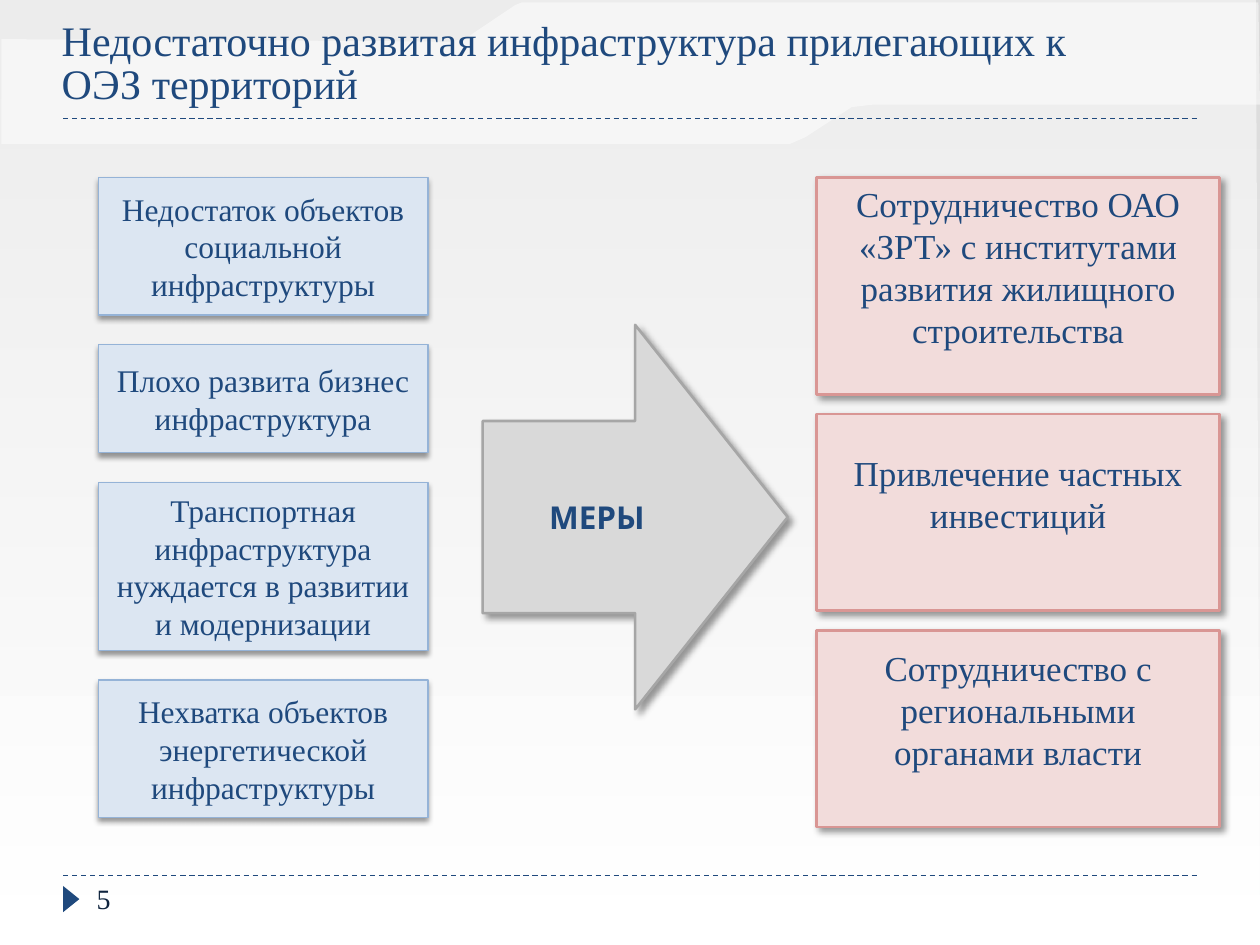
from dataclasses import dataclass

from lxml import etree
from pptx import Presentation
from pptx.dml.color import RGBColor
from pptx.enum.dml import MSO_LINE
from pptx.enum.shapes import MSO_CONNECTOR, MSO_SHAPE
from pptx.enum.text import MSO_ANCHOR, MSO_AUTO_SIZE, PP_ALIGN
from pptx.oxml.ns import qn
from pptx.util import Cm, Pt

RECT, ARROW, TRIANGLE = MSO_SHAPE.RECTANGLE, MSO_SHAPE.RIGHT_ARROW, MSO_SHAPE.ISOSCELES_TRIANGLE
STRAIGHT, DASH = MSO_CONNECTOR.STRAIGHT, MSO_LINE.DASH
MIDDLE, BOTTOM = MSO_ANCHOR.MIDDLE, MSO_ANCHOR.BOTTOM
LEFT, CENTER = PP_ALIGN.LEFT, PP_ALIGN.CENTER
NO_FIT = MSO_AUTO_SIZE.NONE


@dataclass(frozen=True)
class Theme:
    font: str = "Times New Roman"
    arrow_font: str = "Cabin"
    navy: str = "1F497D"
    number: str = "0F243E"
    white: str = "FFFFFF"
    gray: str = "D9D9D9"
    gray_line: str = "A6A6A6"
    blue: str = "DCE6F2"
    blue_line: str = "95B3D7"
    pink: str = "F2DCDB"
    pink_line: str = "D99694"
    title_size: int = 24
    measure_size: int = 20
    problem_size: int = 18
    number_size: int = 16


T = Theme()

PROBLEMS = [
    ("Недостаток объектов социальной инфраструктуры", 2.77),
    ("Плохо развита бизнес инфраструктура", 2.18),
    ("Транспортная инфраструктура нуждается в развитии и модернизации", 3.38),
    ("Нехватка объектов энергетической инфраструктуры", 2.77),
]
MEASURES = [
    ("Сотрудничество ОАО «ЗРТ» с институтами развития жилищного строительства", 4.37),
    ("Привлечение частных инвестиций", 3.96),
    ("Сотрудничество с региональными органами власти", 3.96),
]
VEIL = [(-0.05, 19.02), (25.4, 19.05), (25.32, 0), (-0.08, 0)]
RIBBON = [
    (25.37, 0.05), (10.85, 0.05), (10.52, 0.05), (10.39, 0.1), (9.63, 0.61),
    (9.4, 0.77), (9.07, 0.84), (4.5, 0.81), (0.03, 0.79), (0.03, 2.9),
    (15.93, 2.9), (16.23, 2.77), (17.17, 2.16), (17.6, 2.11), (25.4, 2.11),
]


def rgb(color):
    return RGBColor.from_string(color)


def paint(sp, color):
    sp.fill.solid()
    sp.fill.fore_color.rgb = rgb(color)


def write(tf, text, size, color=T.navy, font=T.font, bold=False, align=CENTER):
    tf.word_wrap = True
    p = tf.paragraphs[0]
    p.text = text
    p.alignment = align
    p.font.size, p.font.name, p.font.bold = Pt(size), font, bold
    p.font.color.rgb = rgb(color)
    return p


def add_background(s):
    fill = s.background.fill
    fill.gradient()
    fill.gradient_angle = 270
    for stop, color in zip(fill.gradient_stops, (T.gray, T.white)):
        stop.color.rgb = rgb(color)


def add_translucent(s, points):
    points = [(Cm(x), Cm(y)) for x, y in points]
    builder = s.shapes.build_freeform(*points[0])
    builder.add_line_segments(points[1:])
    sp = builder.convert_to_shape()
    sp.shadow.inherit = False
    paint(sp, T.white)
    sp.line.fill.background()
    color = sp.element.spPr.find(".//" + qn("a:srgbClr"))
    etree.SubElement(color, qn("a:alpha"), val="50000")


def add_rule(s, y):
    line = s.shapes.add_connector(STRAIGHT, Cm(1.27), Cm(y), Cm(24.13), Cm(y))
    line.line.color.rgb = rgb(T.navy)
    line.line.width = Pt(0.75)
    line.line.dash_style = DASH
    etree.SubElement(line.element.spPr, qn("a:effectLst"))


def add_shadow(sp, blur, dist, angle):
    sp.shadow.inherit = False
    effects = sp.element.spPr.find(qn("a:effectLst"))
    shadow = etree.SubElement(effects, qn("a:outerShdw"), blurRad=str(Pt(blur)),
                              dist=str(Pt(dist)), dir=str(angle * 60000), rotWithShape="0")
    color = etree.SubElement(shadow, qn("a:srgbClr"), val="000000")
    etree.SubElement(color, qn("a:alpha"), val="40000")


def add_block(s, kind, box, fill, line, width, shadow):
    sp = s.shapes.add_shape(kind, *map(Cm, box))
    paint(sp, fill)
    sp.line.color.rgb = rgb(line)
    sp.line.width = Pt(width)
    add_shadow(sp, *shadow)
    sp.text_frame.vertical_anchor = MIDDLE
    return sp


def add_problems(s):
    y = 3.58
    for text, height in PROBLEMS:
        sp = add_block(s, RECT, (1.98, y, 6.65, height), T.blue, T.blue_line, 0.75, (3, 2, 90))
        tf = sp.text_frame
        tf.margin_left = tf.margin_right = tf.margin_top = tf.margin_bottom = Cm(0.25)
        write(tf, text, T.problem_size)
        y += height + 0.6


def add_measures(s):
    y = 3.58
    for text, height in MEASURES:
        sp = add_block(s, RECT, (16.46, y, 8.13, height), T.pink, T.pink_line, 1.5, (4, 3, 45))
        sp.text_frame.margin_bottom = Cm(0.9)
        write(sp.text_frame, text, T.measure_size)
        y += height + 0.4


def add_arrow(s):
    sp = add_block(s, ARROW, (9.73, 6.55, 6.15, 7.75), T.gray, T.gray_line, 1.5, (4, 3, 45))
    write(sp.text_frame, "МЕРЫ", T.problem_size, font=T.arrow_font, bold=True)


def add_title(s, text):
    title = s.shapes.title
    title.left, title.top, title.width, title.height = Cm(0.99), Cm(0), Cm(21.44), Cm(2.31)
    tf = title.text_frame
    tf.auto_size = NO_FIT
    tf.vertical_anchor = BOTTOM
    write(tf, text, T.title_size, align=LEFT).line_spacing = 0.85
    s.shapes.element.append(title.element)


def add_page_number(s, number):
    marker = s.shapes.add_shape(TRIANGLE, Cm(1.17), Cm(17.96), Cm(0.53), Cm(0.33))
    marker.rotation = 90
    marker.shadow.inherit = False
    paint(marker, T.navy)
    marker.line.fill.background()
    box = s.shapes.add_textbox(Cm(1.7), Cm(17.65), Cm(5.51), Cm(1.02))
    write(box.text_frame, number, T.number_size, T.number, align=LEFT)


def main():
    prs = Presentation()
    prs.slide_width, prs.slide_height = Cm(25.4), Cm(19.05)
    s = prs.slides.add_slide(prs.slide_layouts[5])
    add_background(s)
    for outline in (VEIL, RIBBON):
        add_translucent(s, outline)
    for y in (2.39, 17.65):
        add_rule(s, y)
    add_title(s, "Недостаточно развитая инфраструктура прилегающих к ОЭЗ территорий")
    add_page_number(s, "5")
    add_problems(s)
    add_measures(s)
    add_arrow(s)
    prs.save("out.pptx")


if __name__ == "__main__":
    main()
